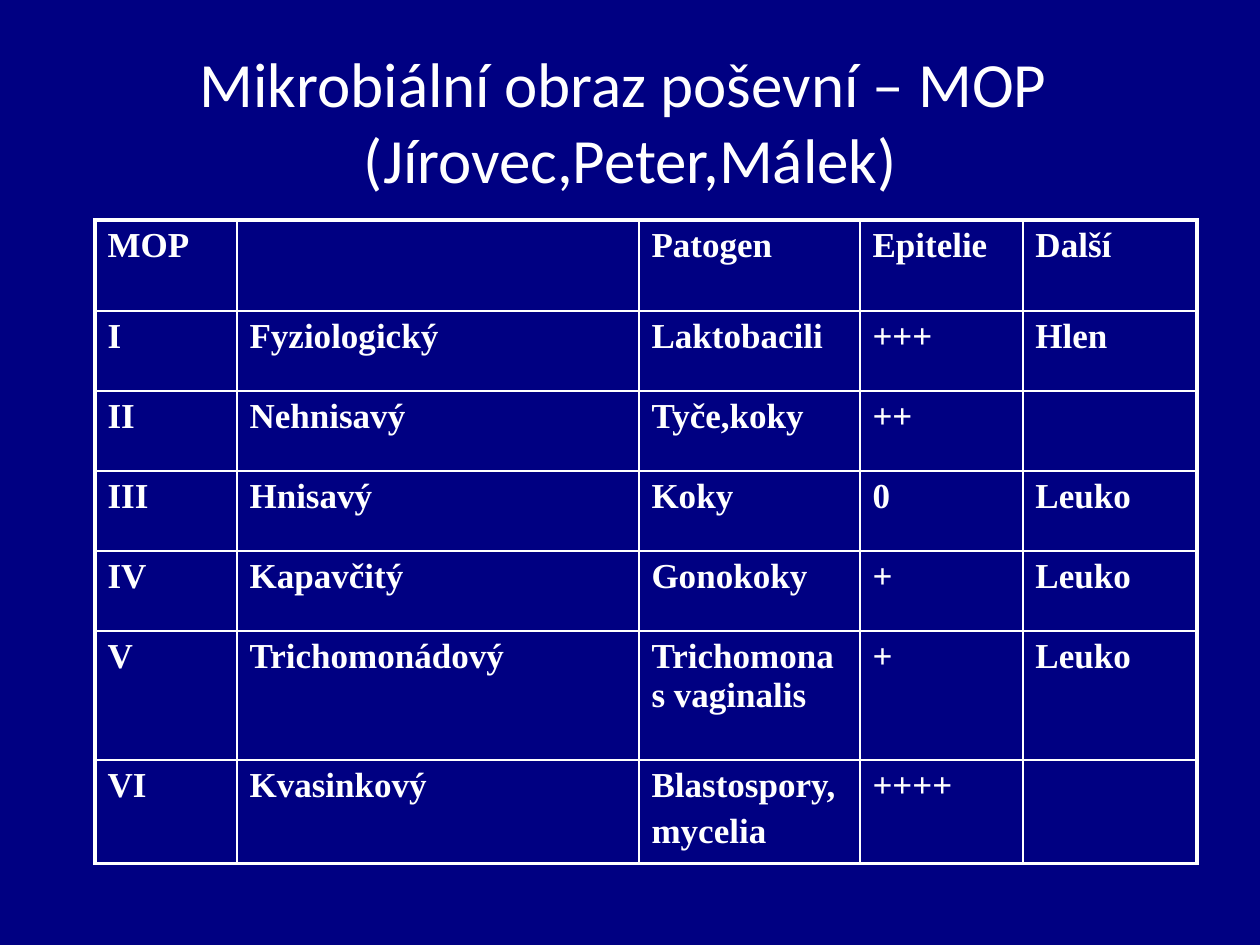
"""Build a slide with the table of vaginal microbial patterns (MOP)."""
from lxml.etree import SubElement
from pptx import Presentation
from pptx.dml.color import RGBColor
from pptx.enum.text import MSO_ANCHOR, PP_ALIGN
from pptx.oxml.ns import qn
from pptx.util import Pt

PX = 914400 / 126
NAVY = RGBColor(0x00, 0x00, 0x82)
WHITE = RGBColor(0xFF, 0xFF, 0xFF)
COLS = [142, 402, 221, 163, 174]
HEIGHTS = [91, 80, 80, 80, 80, 129, 97]
ROWS = [
    ["MOP", "", "Patogen", "Epitelie", "Další"],
    ["I", "Fyziologický", "Laktobacili", "+++", "Hlen"],
    ["II", "Nehnisavý", "Tyče,koky", "++", ""],
    ["III", "Hnisavý", "Koky", "0", "Leuko"],
    ["IV", "Kapavčitý", "Gonokoky", "+", "Leuko"],
    ["V", "Trichomonádový", "Trichomonas vaginalis", "+", "Leuko"],
    ["VI", "Kvasinkový", "Blastospory,\nmycelia", "++++", ""],
]


def px(n):
    return round(n * PX)


def write(tf, text, size=20, font="Times New Roman", bold=True, align=PP_ALIGN.LEFT):
    tf.text = text
    for i, p in enumerate(tf.paragraphs):
        p.alignment = align
        if i:
            p.space_before = Pt(4)
        p.font.size = Pt(size)
        for r in p.runs:
            r.font.size, r.font.name, r.font.bold = Pt(size), font, bold
            r.font.color.rgb = WHITE


prs = Presentation()
prs.slide_width, prs.slide_height = px(1260), px(945)
s = prs.slides.add_slide(prs.slide_layouts[6])
s.background.fill.solid()
s.background.fill.fore_color.rgb = NAVY

title = s.shapes.add_textbox(px(95), px(41), px(1071), px(158))
title.text_frame.word_wrap = True
title.text_frame.vertical_anchor = MSO_ANCHOR.MIDDLE
write(title.text_frame, "Mikrobiální obraz poševní – MOP \v(Jírovec,Peter,Málek)",
      size=36, font="Calibri", bold=False, align=PP_ALIGN.CENTER)

table = s.shapes.add_table(len(ROWS), len(COLS), px(95), px(220),
                           px(sum(COLS)), px(sum(HEIGHTS))).table
table.first_row = table.horz_banding = False
for col, width in zip(table.columns, COLS):
    col.width = px(width)
for row, height in zip(table.rows, HEIGHTS):
    row.height = px(height)

for i, texts in enumerate(ROWS):
    for j, text in enumerate(texts):
        cell = table.cell(i, j)
        write(cell.text_frame, text)
        outer = {"lnL": j == 0, "lnR": j == len(COLS) - 1,
                 "lnT": i == 0, "lnB": i == len(ROWS) - 1}
        tcPr = cell._tc.get_or_add_tcPr()
        for side, thick in outer.items():
            ln = SubElement(tcPr, qn(f"a:{side}"), w=str(Pt(2.25 if thick else 1)))
            fill = SubElement(ln, qn("a:solidFill"))
            SubElement(fill, qn("a:srgbClr"), val=str(WHITE))
        cell.fill.background()

prs.save("out.pptx")
